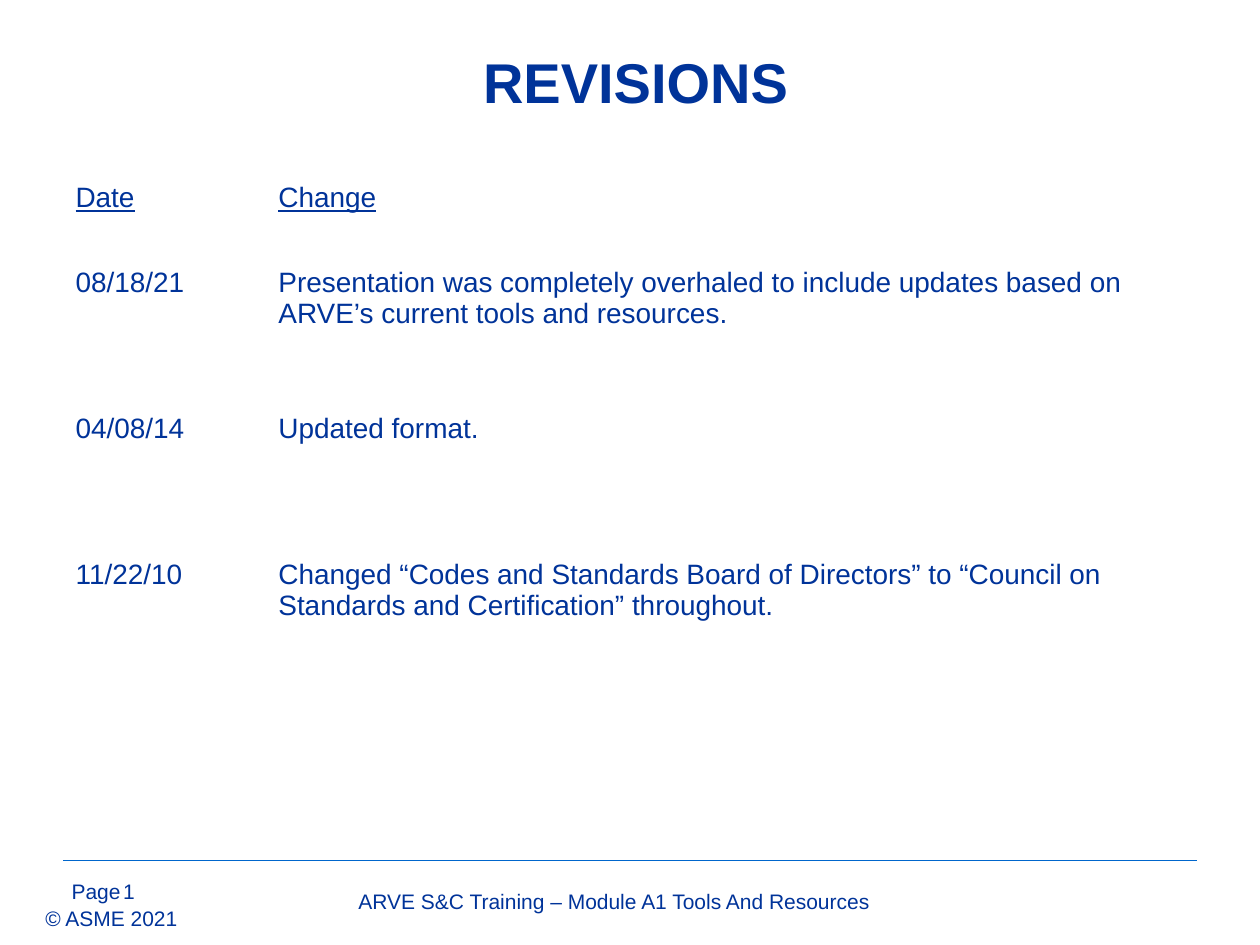
from pptx import Presentation
from pptx import util as u
from pptx.dml.color import RGBColor
from pptx.enum import shapes, text
from pptx.oxml.ns import qn
from lxml import etree

THEME = {
    "font": "Arial",
    "ink": RGBColor.from_string("003399"),
    "rule": RGBColor.from_string("0066CC"),
    "paper": RGBColor.from_string("FFFFFF"),
    "title": 32,
    "body": 16,
    "footer": 12,
}

TITLE = "REVISIONS"
REVISIONS = [
    ("Date", "Change"),
    ("08/18/21", "Presentation was completely overhaled to include updates based on "
                 "ARVE’s current tools and resources."),
    ("04/08/14", "Updated format."),
    ("11/22/10", "Changed “Codes and Standards Board of Directors” to “Council on "
                 "Standards and Certification” throughout."),
]
COLUMN_WIDTHS = [1.61, 7.39]
ROW_HEIGHTS = [0.67, 1.16, 1.16, 1]
FOOTERS = [
    ("Page", (0.47, 6.92, 0.77, 0.26), True, text.PP_ALIGN.LEFT),
    ("© ASME 2021", (0.36, 7.19, 1.06, 0.2), False, text.PP_ALIGN.LEFT),
    ("1", (0.88, 6.92, 0.47, 0.23), True, text.PP_ALIGN.LEFT),
    ("ARVE S&C Training – Module A1 Tools And Resources",
     (1.54, 7, 6.67, 0.26), True, text.PP_ALIGN.CENTER),
]


def write(frame, words, size, align=text.PP_ALIGN.LEFT, bold=False, underline=False):
    paragraph = frame.paragraphs[0]
    paragraph.alignment = align
    run = paragraph.add_run()
    run.text = words
    run.font.name = THEME["font"]
    run.font.size = u.Pt(THEME[size])
    run.font.color.rgb = THEME["ink"]
    run.font.bold = bold
    run.font.underline = underline


def add_title(slide):
    title = slide.shapes.title
    title.left, title.top, title.width, title.height = map(u.Inches, (0.67, 0.33, 8.75, 0.63))
    title.text_frame.vertical_anchor = text.MSO_ANCHOR.MIDDLE
    write(title.text_frame, TITLE, "title", text.PP_ALIGN.CENTER, bold=True)


def add_revisions(slide):
    frame = slide.shapes.add_table(
        len(REVISIONS), len(COLUMN_WIDTHS), u.Inches(0.5), u.Inches(1.4),
        u.Inches(sum(COLUMN_WIDTHS)), u.Inches(sum(ROW_HEIGHTS)))
    table = frame.table
    table.horz_banding = False
    for column, width in zip(table.columns, COLUMN_WIDTHS):
        column.width = u.Inches(width)
    for index, (row, height, entries) in enumerate(zip(table.rows, ROW_HEIGHTS, REVISIONS)):
        row.height = u.Inches(height)
        for cell, words in zip(row.cells, entries):
            cell.fill.solid()
            cell.fill.fore_color.rgb = THEME["paper"]
            write(cell.text_frame, words, "body", underline=index == 0)


def add_footer(slide):
    rule = slide.shapes.add_connector(
        shapes.MSO_CONNECTOR.STRAIGHT, *map(u.Inches, (0.5, 6.83, 9.5, 6.83)))
    rule.line.color.rgb = THEME["rule"]
    rule.line.width = u.Pt(0.75)
    etree.SubElement(rule.element.spPr, qn("a:effectLst"))
    for words, place, padded, align in FOOTERS:
        frame = slide.shapes.add_textbox(*map(u.Inches, place)).text_frame
        frame.word_wrap = padded
        if not padded:
            frame.margin_left = frame.margin_right = 0
            frame.margin_top = frame.margin_bottom = 0
            frame.auto_size = text.MSO_AUTO_SIZE.SHAPE_TO_FIT_TEXT
        write(frame, words, "footer", align)


def main():
    presentation = Presentation()
    presentation.slide_width = u.Inches(10)
    presentation.slide_height = u.Inches(7.5)
    slide = presentation.slides.add_slide(presentation.slide_layouts.get_by_name("Title Only"))
    slide.background.fill.solid()
    slide.background.fill.fore_color.rgb = THEME["paper"]
    add_title(slide)
    add_revisions(slide)
    add_footer(slide)
    presentation.save("out.pptx")


if __name__ == "__main__":
    main()
